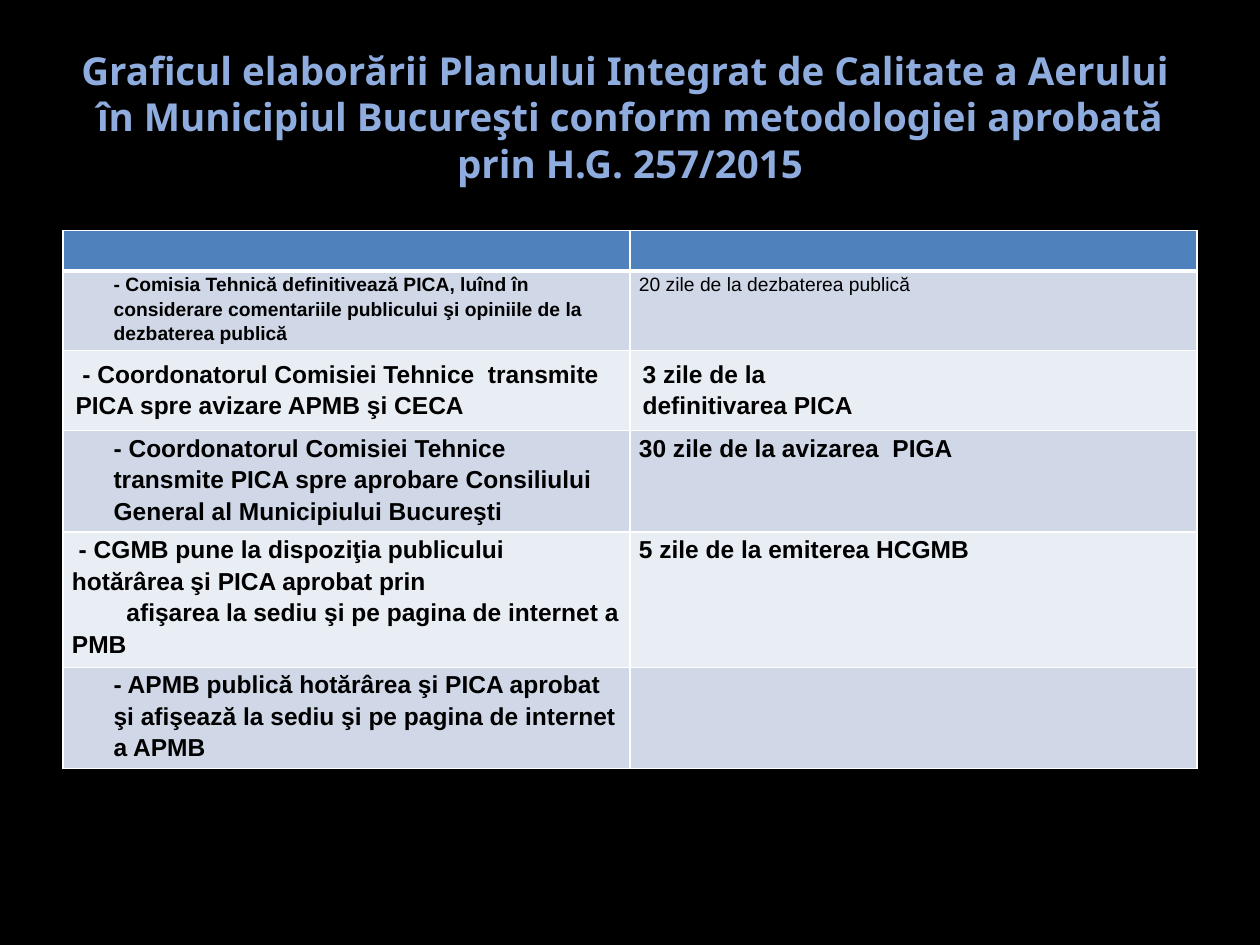
import pptx
import pptx.util
import pptx.dml.color
import pptx.enum.text
import lxml.etree

Cm, Pt = pptx.util.Cm, pptx.util.Pt
Align, Anchor = pptx.enum.text.PP_ALIGN, pptx.enum.text.MSO_ANCHOR

# Content
TITLE = ("Graficul elaborării Planului Integrat de Calitate a Aerului  în "
         "Municipiul Bucureşti conform metodologiei aprobată prin H.G. 257/2015")

# Each row: height in cm, step lines, term lines, text format
ROWS = [
    (0.81, [], [], {}),
    (1.49, ["- Comisia Tehnică definitivează PICA, luînd în considerare "
            "comentariile publicului şi opiniile de la dezbaterea publică"],
     ["20 zile de la dezbaterea publică"],
     {"size": 11, "left": 0.84, "light": True}),
    (1.52, [" - Coordonatorul Comisiei Tehnice  transmite PICA spre avizare "
            "APMB şi CECA"],
     ["3 zile de la", "definitivarea PICA"], {"padded": True}),
    (1.92, ["- Coordonatorul Comisiei Tehnice  transmite PICA spre aprobare "
            "Consiliului", "General al Municipiului Bucureşti"],
     ["30 zile de la avizarea  PIGA"], {"left": 0.84}),
    (2.56, [" - CGMB pune la dispoziţia publicului hotărârea şi PICA aprobat "
            "prin", "afişarea la sediu şi pe pagina de internet a PMB"],
     ["5 zile de la emiterea HCGMB"], {"first": [0, 1.1]}),
    (1.92, ["- APMB publică hotărârea şi PICA aprobat şi afişează la sediu şi "
            "pe pagina de internet a APMB"], [], {"left": 0.84}),
]
HEAD, BANDS = "4F81BD", ("E9EDF4", "D0D8E8")
LEFT, WIDTH = 1.27, 22.86


def tint(code):
    return pptx.dml.color.RGBColor.from_string(code)


def write(frame, lines, size=14, font="Arial", color="000000", bold=True,
          align=Align.LEFT, space=1.15, left=0, first=()):
    for i, line in enumerate(lines):
        para = frame.paragraphs[0] if i == 0 else frame.add_paragraph()
        para.alignment, para.line_spacing = align, space
        props = para._p.get_or_add_pPr()
        props.set("marL", str(Cm(left)))
        props.set("indent", str(Cm(first[i] if first else 0)))
        run = para.add_run()
        run.text = line
        run.font.name, run.font.size, run.font.bold = font, Pt(size), bold
        run.font.color.rgb = tint(color)


def edge(cell, side, width, color="FFFFFF"):
    ns = "{http://schemas.openxmlformats.org/drawingml/2006/main}"
    props = cell._tc.get_or_add_tcPr()
    line = lxml.etree.SubElement(props, ns + "ln" + side, w=str(Pt(width)))
    fill = lxml.etree.SubElement(line, ns + "solidFill")
    lxml.etree.SubElement(fill, ns + "srgbClr", val=color)


deck = pptx.Presentation()
deck.slide_width, deck.slide_height = Cm(25.4), Cm(19.05)
slide = deck.slides.add_slide(deck.slide_layouts[6])
slide.background.fill.solid()
slide.background.fill.fore_color.rgb = tint("000000")

# Title
box = slide.shapes.add_textbox(Cm(LEFT), Cm(0.76), Cm(WIDTH), Cm(3.18))
box.text_frame.word_wrap = True
box.text_frame.vertical_anchor = Anchor.MIDDLE
write(box.text_frame, [TITLE], size=22, font="Noto Sans", color="8FACDE",
      align=Align.CENTER, space=1.0)

# Table of steps and terms
high = sum(row[0] for row in ROWS)
grid = slide.shapes.add_table(len(ROWS), 2, Cm(LEFT), Cm(4.65),
                              Cm(WIDTH), Cm(high)).table
for r, (tall, step, term, form) in enumerate(ROWS):
    grid.rows[r].height = Cm(tall)
    size = form.get("size", 14)
    looks = [{"left": form.get("left", 0), "first": form.get("first", ())},
             {"bold": not form.get("light")}]
    for c, lines in enumerate((step, term)):
        cell = grid.cell(r, c)
        if not form.get("padded"):
            cell.margin_left = cell.margin_right = Cm(0.18)
            cell.margin_top = cell.margin_bottom = 0
        for side in "LRTB":
            thick = (r, side) in ((0, "B"), (1, "T"))
            edge(cell, side, 3 if thick else 1)
        cell.fill.solid()
        cell.fill.fore_color.rgb = tint(BANDS[r % 2] if r else HEAD)
        write(cell.text_frame, lines, size=size, **looks[c])

deck.save("out.pptx")
